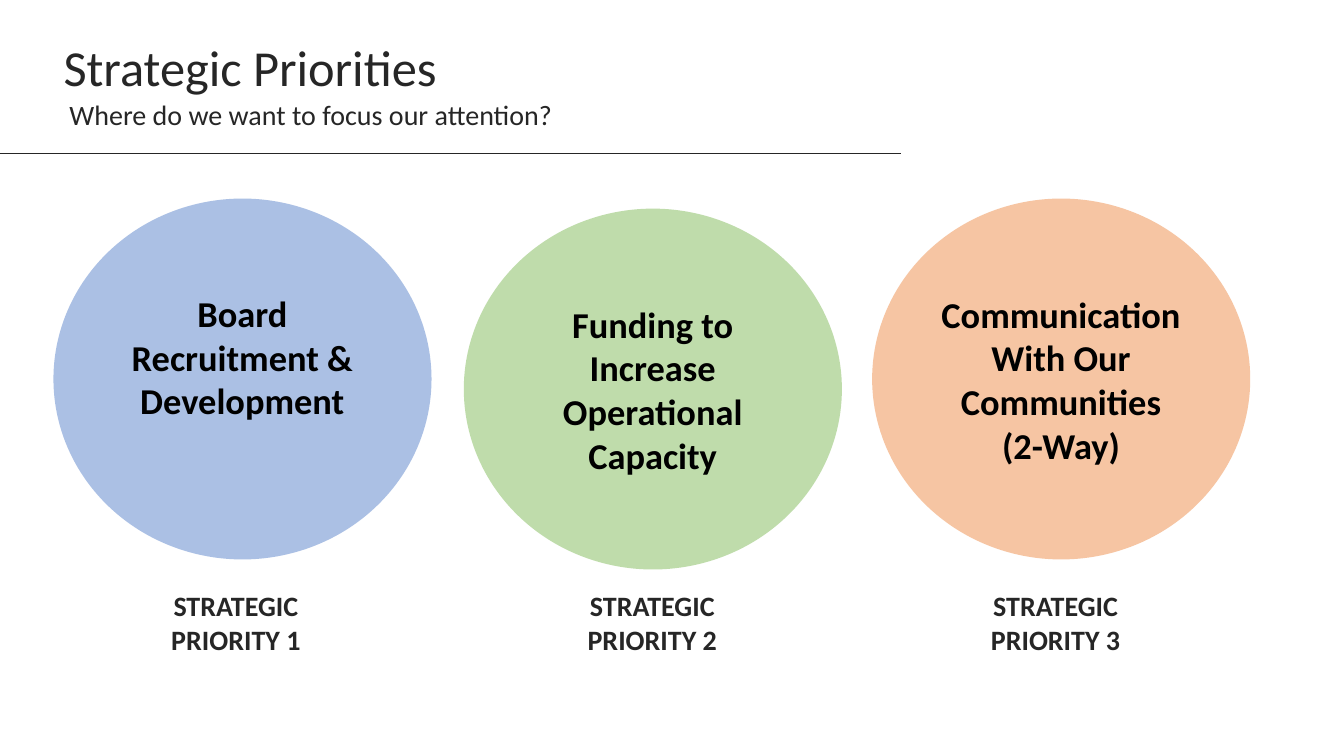
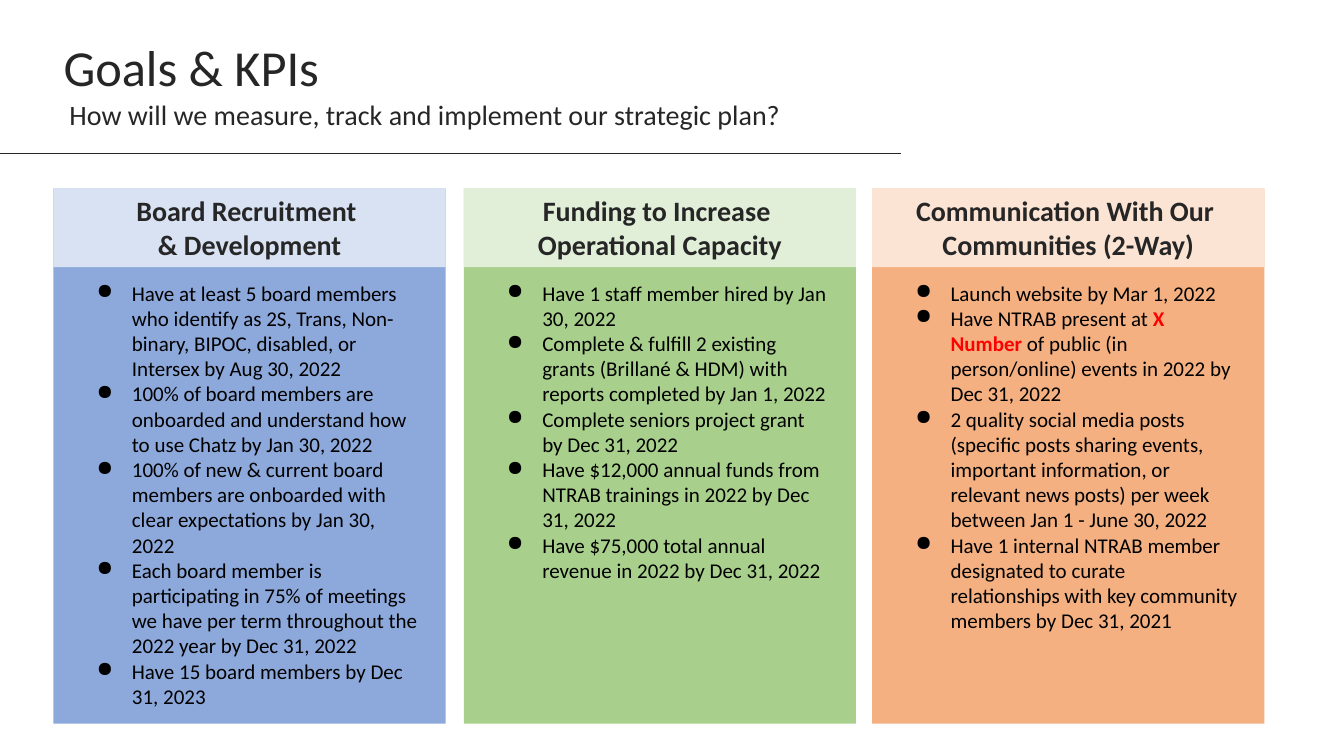
import dataclasses
import pptx
import pptx.util
import pptx.dml.color
import pptx.enum.shapes
import pptx.enum.text
import pptx.oxml.ns
import pptx.oxml.xmlchemy

Inches = pptx.util.Inches
Pt = pptx.util.Pt
SHAPE = pptx.enum.shapes.MSO_SHAPE
ALIGN = pptx.enum.text.PP_ALIGN
ANCHOR = pptx.enum.text.MSO_ANCHOR
qn = pptx.oxml.ns.qn
make = pptx.oxml.xmlchemy.OxmlElement


@dataclasses.dataclass(frozen=True)
class Theme:
    font: str = "Calibri"
    ink: str = "262626"
    black: str = "000000"
    alert: str = "FF0000"
    fills: tuple = ("8DA9DB", "A8D08C", "F4B081")
    tints: tuple = ("D8E2F3", "E1EFD8", "FBE4D4")
    title: int = 36
    circle: int = 26
    label: int = 20
    body: int = 15


THEME = Theme()
LEFTS = (0.53, 4.6, 8.65)
CIRCLE_W, CIRCLE_H = 3.75, 3.58
CARD_W, CARD_H, HEAD_H = 3.89, 5.31, 0.78
CARD_TOP = 1.87

# Circle text, circle top, bottom inset, label left
CIRCLES = (
    ("Board Recruitment & Development", 1.97, 0.49, 1.1),
    ("Funding to Increase Operational Capacity", 2.07, 0.05, 5.23),
    ("Communication With Our Communities (2-Way)", 1.97, 0.05, 9.23),
)

# Heading and goals; text between bars is emphasised
GOALS = (
    ("Board Recruitment \n& Development", (
        "Have at least 5 board members who identify as 2S, Trans, "
        "Non-binary, BIPOC, disabled, or Intersex by Aug 30, 2022",
        "100% of board members are onboarded and understand how to use "
        "Chatz by Jan 30, 2022",
        "100% of new & current board members are onboarded with clear "
        "expectations by Jan 30, 2022",
        "Each board member is participating in 75% of meetings we have "
        "per term throughout the 2022 year by Dec 31, 2022",
        "Have 15 board members by Dec 31, 2023",
    )),
    ("Funding to Increase \nOperational Capacity", (
        "Have 1 staff member hired by Jan 30, 2022",
        "Complete & fulfill 2 existing grants (Brillané & HDM) with "
        "reports completed by Jan 1, 2022",
        "Complete seniors project grant by Dec 31, 2022",
        "Have $12,000 annual funds from NTRAB trainings in 2022 by "
        "Dec 31, 2022",
        "Have $75,000 total annual revenue in 2022 by Dec 31, 2022",
    )),
    ("Communication With Our \nCommunities (2-Way)", (
        "Launch website by Mar 1, 2022",
        "Have NTRAB present at |X Number |of public (in person/online) "
        "events in 2022 by Dec 31, 2022",
        "2 quality social media posts (specific posts sharing events, "
        "important information, or relevant news posts) per week between "
        "Jan 1 - June 30, 2022",
        "Have 1 internal NTRAB member designated to curate relationships "
        "with key community members by Dec 31, 2021",
    )),
)


def rgb(code):
    return pptx.dml.color.RGBColor.from_string(code)


def style(run, size, color, bold=False):
    font = run.font
    font.name, font.size, font.bold = THEME.font, Pt(size), bold
    font.color.rgb = rgb(color)


def write(frame, text, size, color, bold=False, align=ALIGN.CENTER,
          anchor=ANCHOR.TOP):
    """Fill a frame with one paragraph of uniform text."""
    frame.word_wrap = True
    frame.auto_size = pptx.enum.text.MSO_AUTO_SIZE.NONE
    frame.vertical_anchor = anchor
    para = frame.paragraphs[0]
    para.text = text
    para.alignment = align
    for run in para.runs:
        style(run, size, color, bold)


def add_box(slide, *box):
    frame = slide.shapes.add_textbox(*map(Inches, box)).text_frame
    frame.word_wrap = True
    return frame


def add_fill(slide, kind, box, color, alpha=None):
    """Add a borderless shape, with alpha as percent opacity."""
    shape = slide.shapes.add_shape(kind, *map(Inches, box))
    shape.shadow.inherit = False
    shape.fill.solid()
    shape.fill.fore_color.rgb = rgb(color)
    shape.line.fill.background()
    if alpha:
        tint = shape._element.spPr.find(".//" + qn("a:srgbClr"))
        mark = make("a:alpha")
        mark.set("val", str(alpha * 1000))
        tint.append(mark)
    return shape


def add_rule(slide):
    rule = slide.shapes.add_connector(
        pptx.enum.shapes.MSO_CONNECTOR.STRAIGHT,
        Inches(0), Inches(1.52), Inches(8.94), Inches(1.52))
    rule.line.color.rgb = rgb(THEME.ink)
    rule.line.width = Pt(0.75)
    rule._element.spPr.append(make("a:effectLst"))


def add_page(deck, title, lead):
    """Add a slide with its title, lead line and rule."""
    slide = deck.slides.add_slide(deck.slide_layouts[5])
    head = slide.shapes.title
    head.left, head.top = Inches(0.53), Inches(0.31)
    head.width, head.height = Inches(12.47), Inches(0.7)
    write(head.text_frame, title, THEME.title, THEME.ink, align=ALIGN.LEFT)
    write(add_box(slide, 0.59, 0.92, 12.4, 0.45), lead, THEME.label,
          THEME.ink, align=ALIGN.LEFT)
    add_rule(slide)
    return slide


def set_bullet(para):
    props = para._p.get_or_add_pPr()
    props.set("marL", str(Inches(0.5)))
    props.set("indent", str(Inches(-0.35)))
    mark = make("a:buChar")
    mark.set("char", "●")
    props.append(mark)


def add_list(slide, left, goals):
    frame = add_box(slide, left, 2.73, 3.55, 4.39)
    for i, goal in enumerate(goals):
        para = frame.add_paragraph() if i else frame.paragraphs[0]
        set_bullet(para)
        for j, part in enumerate(goal.split("|")):
            run = para.add_run()
            run.text = part
            loud = j % 2 == 1
            style(run, THEME.body, THEME.alert if loud else THEME.black, loud)


def add_circle(slide, left, top, text, color, inset):
    box = (left, top, CIRCLE_W, CIRCLE_H)
    frame = add_fill(slide, SHAPE.OVAL, box, color, 73).text_frame
    frame.margin_bottom = Inches(inset)
    write(frame, text, THEME.circle, THEME.black, True, anchor=ANCHOR.MIDDLE)


def add_card(slide, left, head, goals, fill, tint):
    add_fill(slide, SHAPE.RECTANGLE, (left, CARD_TOP, CARD_W, CARD_H), fill)
    band = add_fill(slide, SHAPE.RECTANGLE,
                    (left, CARD_TOP, CARD_W, HEAD_H), tint)
    write(band.text_frame, head, THEME.label, THEME.ink, True)
    add_list(slide, left + 0.18, goals)


def main():
    deck = pptx.Presentation()
    deck.slide_width, deck.slide_height = Inches(13.33), Inches(7.5)

    slide = add_page(deck, "Strategic Priorities",
                     "Where do we want to focus our attention?")
    rows = zip(LEFTS, CIRCLES, THEME.fills)
    for i, (left, (text, top, inset, edge), fill) in enumerate(rows, 1):
        add_circle(slide, left, top, text, fill, inset)
        write(add_box(slide, edge, 5.79, 2.48, 0.78),
              f"STRATEGIC\nPRIORITY {i}", THEME.label, THEME.ink, True)

    slide = add_page(
        deck, "Goals & KPIs",
        "How will we measure, track and implement our strategic plan?")
    for left, (head, goals), fill, tint in zip(
            LEFTS, GOALS, THEME.fills, THEME.tints):
        add_card(slide, left, head, goals, fill, tint)

    deck.save("out.pptx")


if __name__ == "__main__":
    main()
